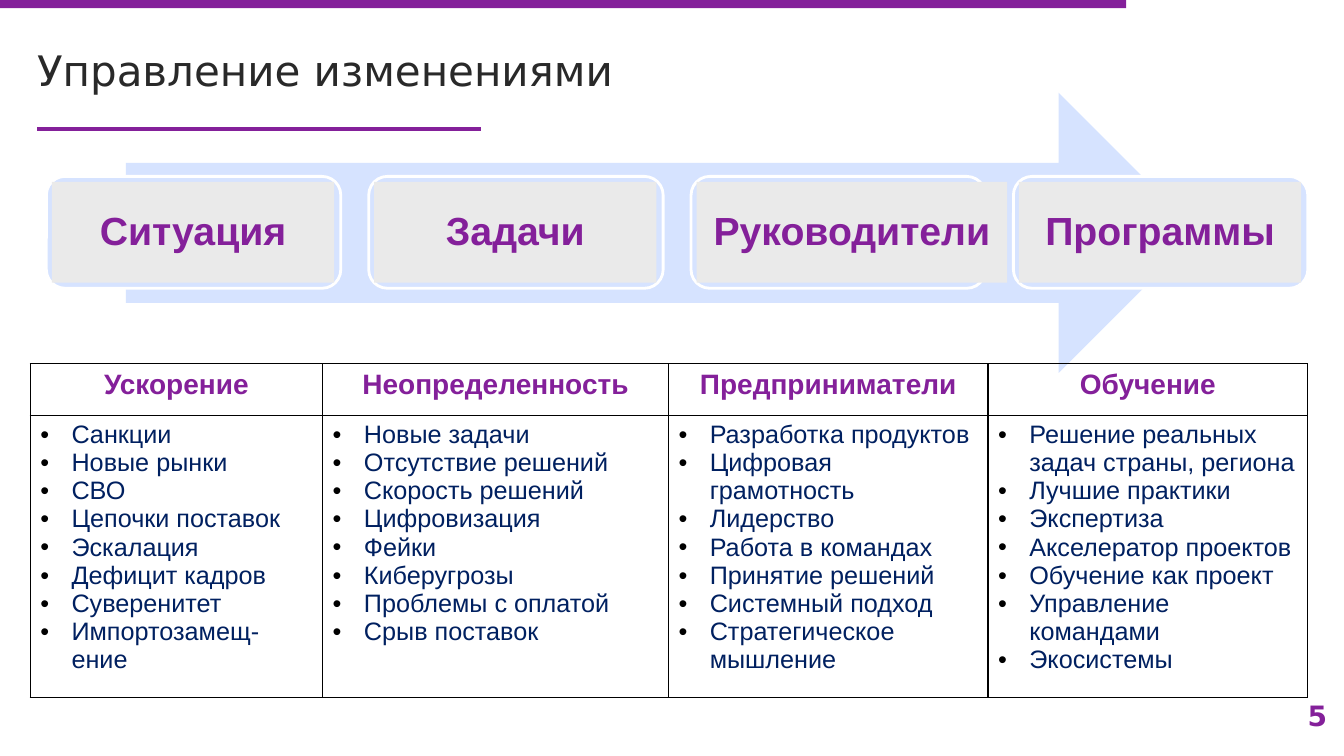
from lxml.etree import SubElement
from pptx import Presentation
from pptx.dml.color import RGBColor
from pptx.enum.shapes import MSO_CONNECTOR, MSO_SHAPE
from pptx.enum.text import MSO_ANCHOR, PP_ALIGN
from pptx.oxml import parse_xml
from pptx.oxml.ns import nsdecls, qn
from pptx.util import Inches, Pt

# Content
TITLE = "Управление изменениями"
PAGE_NUMBER = "5"
STAGES = ["Ситуация", "Задачи", "Руководители", "Программы"]
TOPICS = {
    "Ускорение": ["Санкции", "Новые рынки", "СВО", "Цепочки поставок", "Эскалация",
                  "Дефицит кадров", "Суверенитет", "Импортозамещ-ение"],
    "Неопределенность": ["Новые задачи", "Отсутствие решений", "Скорость решений",
                         "Цифровизация", "Фейки", "Киберугрозы", "Проблемы с оплатой",
                         "Срыв поставок"],
    "Предприниматели": ["Разработка продуктов", "Цифровая грамотность", "Лидерство",
                        "Работа в командах", "Принятие решений", "Системный подход",
                        "Стратегическое мышление"],
    "Обучение": ["Решение реальных задач страны, региона", "Лучшие практики", "Экспертиза",
                 "Акселератор проектов", "Обучение как проект", "Управление командами",
                 "Экосистемы"],
}

# Style and grid, in inches
COLORS = {"purple": "84209A", "title": "292929", "arrow": "D6E3FF", "card": "EAEAEA",
          "white": "FFFFFF", "navy": "002060", "black": "000000"}
WIDTH, HEIGHT = 13.33, 7.5
STAGE_LEFT, STAGE_TOP, STAGE_PITCH = 0.46, 1.75, 3.197
STAGE_WIDTH, STAGE_HEIGHT, CARD_INSET = 2.92, 1.11, 0.055
CARD_WIDTH, WIDE_CARD_WIDTH = 2.8, 3.08
COLUMN_WIDTHS, ROW_HEIGHTS = [2.9, 3.43, 3.17, 3.17], [0.51, 2.63]
BULLET_INDENT = Inches(0.31)


def color(name):
    return RGBColor.from_string(COLORS[name])


def add_block(page, preset, box, fill, line=None):
    block = page.shapes.add_shape(preset, *map(Inches, box))
    block.shadow.inherit = False
    block.fill.solid()
    block.fill.fore_color.rgb = color(fill)
    if line:
        block.line.color.rgb = color(line)
        block.line.width = Pt(2)
    else:
        block.line.fill.background()
    return block


def write(para, text, size, ink, font="Arial", bold=False, align=None):
    para.text = text
    para.alignment = align
    para.font.name, para.font.size, para.font.bold = font, Pt(size), bold
    para.font.color.rgb = color(ink)


def add_label(page, box, *style, **options):
    frame = page.shapes.add_textbox(*map(Inches, box)).text_frame
    frame.word_wrap = True
    frame.vertical_anchor = MSO_ANCHOR.MIDDLE
    write(frame.paragraphs[0], *style, **options)


def add_bullet(para):
    props = para._p.get_or_add_pPr()
    props.set("marL", str(BULLET_INDENT))
    props.set("indent", str(-BULLET_INDENT))
    tint = SubElement(props, qn("a:buClr"))
    SubElement(tint, qn("a:srgbClr"), val=COLORS["black"])
    SubElement(props, qn("a:buFont"), typeface="Arial")
    SubElement(props, qn("a:buChar"), char="•")


def add_borders(cell):
    cell.fill.background()
    props = cell._tc.get_or_add_tcPr()
    for index, side in enumerate("LRTB"):
        props.insert(index, parse_xml(
            f'<a:ln{side} {nsdecls("a")} w="{Pt(1)}"><a:solidFill>'
            f'<a:srgbClr val="{COLORS["black"]}"/></a:solidFill></a:ln{side}>'))


deck = Presentation()
deck.slide_width, deck.slide_height = Inches(WIDTH), Inches(HEIGHT)
page = deck.slides.add_slide(deck.slide_layouts[6])

# Top band, title with rule, page number
rule = page.shapes.add_connector(MSO_CONNECTOR.STRAIGHT, Inches(4.77), Inches(1.28),
                                 Inches(0.37), Inches(1.28))
rule.line.color.rgb = color("purple")
rule.line.width = Pt(2.25)
SubElement(rule._element.spPr, qn("a:effectLst"))
add_block(page, MSO_SHAPE.RECTANGLE, (0, 0, 11.17, 0.08), "purple")
add_label(page, (0.27, 0.12, 12.38, 1.15), TITLE, 30, "title", font="DejaVu Sans")
add_label(page, (11.92, 6.74, 1.34, 0.71), PAGE_NUMBER, 20, "purple",
          font="DejaVu Sans", bold=True, align=PP_ALIGN.RIGHT)

# Arrow with the stages
add_block(page, MSO_SHAPE.RIGHT_ARROW, (1.25, 0.92, 10.64, 2.78), "arrow")
for index, stage in enumerate(STAGES):
    left = STAGE_LEFT + index * STAGE_PITCH
    frame_box = add_block(page, MSO_SHAPE.ROUNDED_RECTANGLE,
                          (left, STAGE_TOP, STAGE_WIDTH, STAGE_HEIGHT), "arrow", "white")
    frame_box.adjustments[0] = 0.167
    width = WIDE_CARD_WIDTH if stage == "Руководители" else CARD_WIDTH
    card = add_block(page, MSO_SHAPE.RECTANGLE,
                     (left + CARD_INSET, STAGE_TOP + CARD_INSET, width,
                      STAGE_HEIGHT - 2 * CARD_INSET), "card")
    frame = card.text_frame
    frame.word_wrap = True
    frame.vertical_anchor = MSO_ANCHOR.MIDDLE
    frame.margin_left = frame.margin_right = Inches(0.09)
    frame.margin_top = frame.margin_bottom = Inches(0.09)
    write(frame.paragraphs[0], stage, 28, "purple", bold=True, align=PP_ALIGN.CENTER)
    frame.paragraphs[0].line_spacing = 0.9

# Table of topics
table = page.shapes.add_table(
    len(ROW_HEIGHTS), len(COLUMN_WIDTHS), Inches(0.3), Inches(3.61),
    Inches(sum(COLUMN_WIDTHS)), Inches(sum(ROW_HEIGHTS))).table
table.horz_banding = False
for row, height in zip(table.rows, ROW_HEIGHTS):
    row.height = Inches(height)
for index, (heading, items) in enumerate(TOPICS.items()):
    table.columns[index].width = Inches(COLUMN_WIDTHS[index])
    header, body = table.cell(0, index), table.cell(1, index)
    write(header.text_frame.paragraphs[0], heading, 20, "purple", bold=True,
          align=PP_ALIGN.CENTER)
    for position, item in enumerate(items):
        frame = body.text_frame
        para = frame.add_paragraph() if position else frame.paragraphs[0]
        add_bullet(para)
        write(para, item, 18, "navy")
    add_borders(header)
    add_borders(body)

deck.save("out.pptx")
